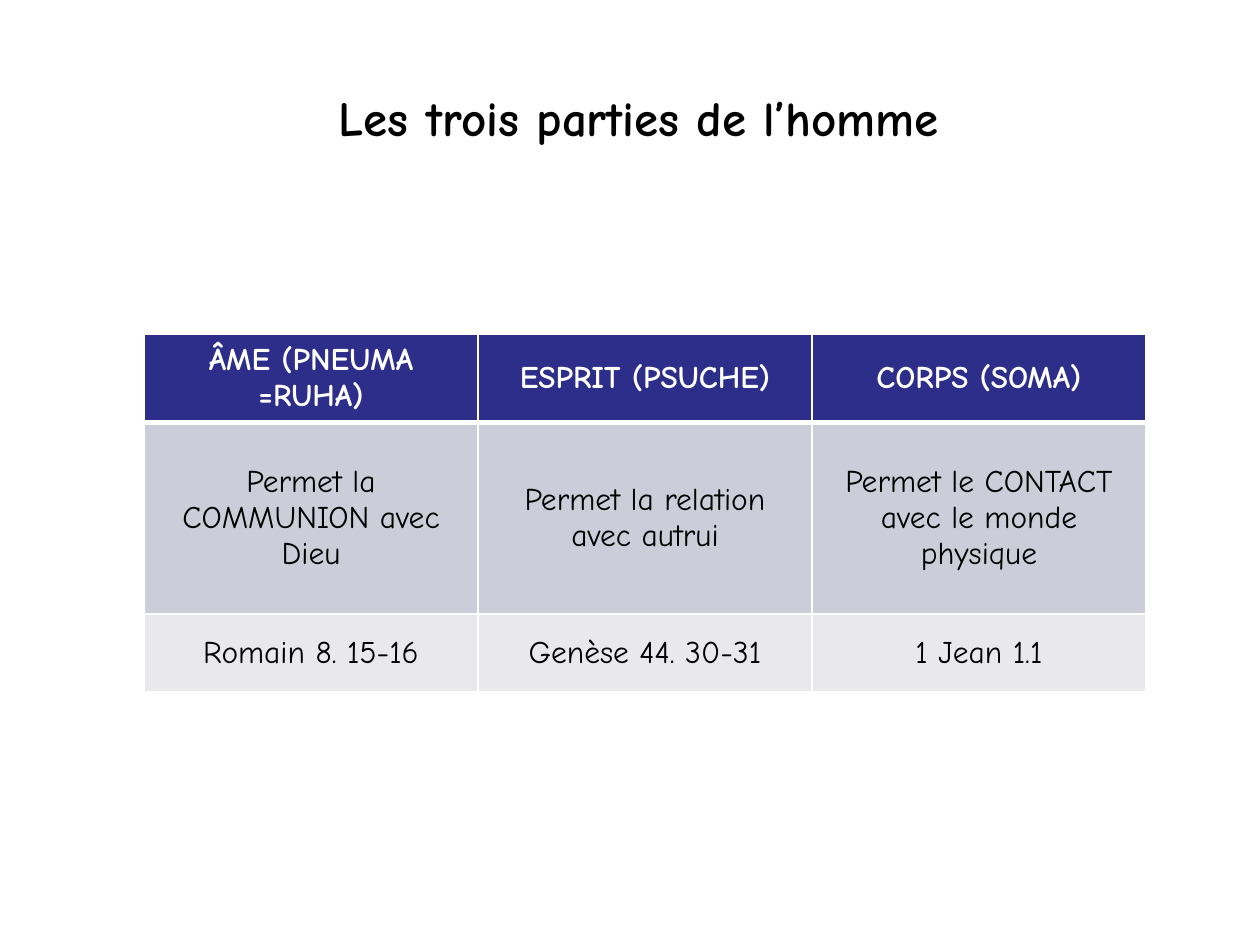
import pptx
import pptx.dml.color
import pptx.enum.text
import pptx.oxml.ns
import pptx.util
from lxml import etree

PX = 914400 / 126
FONT = "Comic Neue"
COLORS = {"black": "000000", "white": "FFFFFF", "navy": "2D2D8A", "mid": "CDCDDA", "pale": "E8E8ED"}


def px(length):
    return pptx.util.Emu(round(length * PX))


def write(frame, text, size, color, bold):
    frame.text = text
    frame.vertical_anchor = pptx.enum.text.MSO_ANCHOR.MIDDLE
    para = frame.paragraphs[0]
    para.alignment = pptx.enum.text.PP_ALIGN.CENTER
    font = para.runs[0].font
    font.name = FONT
    font.size = pptx.util.Pt(size)
    font.bold = bold
    font.color.rgb = pptx.dml.color.RGBColor.from_string(COLORS[color])


deck = pptx.Presentation()
deck.slide_width = px(1260)
deck.slide_height = px(945)
page = deck.slides.add_slide(deck.slide_layouts[6])

title = page.shapes.add_textbox(px(63), px(38), px(1134), px(158))
title.text_frame.word_wrap = True
write(title.text_frame, " Les trois parties de l’homme", 28, "black", True)

rows = [
    (88, "navy", "white", True, ["ÂME (PNEUMA =RUHA)", "ESPRIT (PSUCHE)", "CORPS (SOMA)"]),
    (192, "mid", "black", False, [
        "Permet la COMMUNION avec Dieu",
        "Permet la relation avec autrui",
        "Permet le CONTACT avec le monde physique",
    ]),
    (78, "pale", "black", False, ["Romain 8. 15-16", "Genèse 44. 30-31", "1 Jean 1.1"]),
]
table = page.shapes.add_table(3, 3, px(144), px(334), px(1002), px(358)).table
for column in table.columns:
    column.width = px(334)

for row_index, (height, fill, color, bold, texts) in enumerate(rows):
    table.rows[row_index].height = px(height)
    edges = {
        "lnL": 1,
        "lnR": 1,
        "lnT": 3 if row_index == 1 else 1,
        "lnB": 3 if row_index == 0 else 1,
    }
    for column_index, text in enumerate(texts):
        cell = table.cell(row_index, column_index)
        write(cell.text_frame, text, 18, color, bold)
        cell.vertical_anchor = pptx.enum.text.MSO_ANCHOR.MIDDLE
        properties = cell._tc.get_or_add_tcPr()
        for edge, width in edges.items():
            line = etree.SubElement(properties, pptx.oxml.ns.qn(f"a:{edge}"), w=str(pptx.util.Pt(width)))
            solid = etree.SubElement(line, pptx.oxml.ns.qn("a:solidFill"))
            etree.SubElement(solid, pptx.oxml.ns.qn("a:srgbClr"), val=COLORS["white"])
        cell.fill.solid()
        cell.fill.fore_color.rgb = pptx.dml.color.RGBColor.from_string(COLORS[fill])

deck.save("out.pptx")
